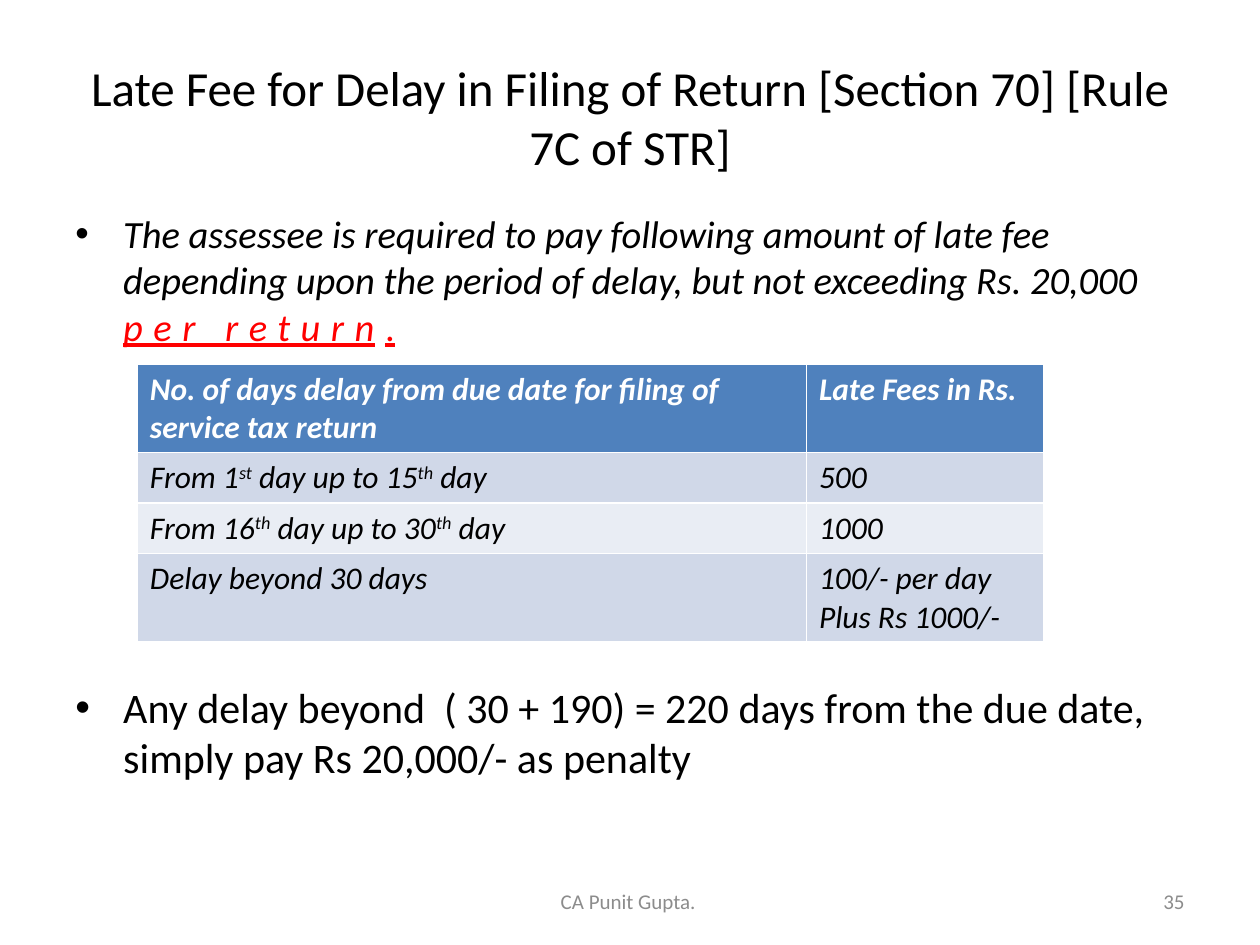
from lxml import etree
from pptx import Presentation
from pptx import util as u
from pptx.dml.color import RGBColor
from pptx.enum import text
from pptx.oxml.ns import qn

WIDTH, HEIGHT = 10, 7.5
MARGIN = 0.05 * WIDTH
CONTENT = WIDTH - 2 * MARGIN
FOOTER_TOP, FOOTER_HEIGHT = 6.95, 0.4
BLACK, GREY, RED, WHITE = "000000", "8C8C8C", "FF0000", "FFFFFF"


def style(font, size, color, bold=False, italic=False):
    font.name = "Calibri"
    font.size = u.Pt(size)
    font.color.rgb = RGBColor.from_string(color)
    font.bold = bold
    font.italic = italic


def add_text_frame(left, top, width, height, anchor):
    box = slide.shapes.add_textbox(*map(u.Inches, (left, top, width, height)))
    box.text_frame.word_wrap = True
    box.text_frame.vertical_anchor = anchor
    return box.text_frame


presentation = Presentation()
presentation.slide_width = u.Inches(WIDTH)
presentation.slide_height = u.Inches(HEIGHT)
slide = presentation.slides.add_slide(presentation.slide_layouts[6])

# Title, footer and slide number
align = text.PP_ALIGN
middle = text.MSO_ANCHOR.MIDDLE
for words, place, size, color, alignment in [
    ("Late Fee for Delay in Filing of Return [Section 70] [Rule 7C of STR]",
     (MARGIN, 0.3, CONTENT, 1.25), 28, BLACK, align.CENTER),
    ("CA Punit Gupta. ",
     (3.42, FOOTER_TOP, 3.17, FOOTER_HEIGHT), 12, GREY, align.CENTER),
    ("35", (7.17, FOOTER_TOP, 2.33, FOOTER_HEIGHT), 12, GREY, align.RIGHT),
]:
    paragraph = add_text_frame(*place, middle).paragraphs[0]
    paragraph.text = words
    paragraph.alignment = alignment
    style(paragraph.font, size, color)

# Bullets above and below the table
body = add_text_frame(MARGIN, 1.62, CONTENT, 5.33, text.MSO_ANCHOR.TOP)
rule, penalty = body.paragraphs[0], body.add_paragraph()
penalty.space_before = u.Pt(190)
for paragraph in (rule, penalty):
    properties = paragraph._p.get_or_add_pPr()
    properties.set("marL", str(u.Inches(0.38)))
    properties.set("indent", str(-u.Inches(0.38)))
    etree.SubElement(properties, qn("a:buFont"), typeface="Arial")
    etree.SubElement(properties, qn("a:buChar"), char="•")

for words, color, italic in [
    ("The assessee is required to pay following amount of late fee depending "
     "upon the period of delay, but not exceeding Rs. 20,000 ", BLACK, True),
    ("per return", RED, True),
    (".", RED, False),
]:
    run = rule.add_run()
    run.text = words
    style(run.font, 22, color, italic=italic)
    if color == RED:
        run.font.underline = True
        run._r.get_or_add_rPr().set("spc", "600")

penalty.text = ("Any delay beyond  ( 30 + 190) = 220 days from the due date, "
                "simply pay Rs 20,000/- as penalty")
style(penalty.font, 24, BLACK)

# Fee table; ^ switches superscript on and off
rows = [
    ("No. of days delay from due date for filing of service tax return",
     "Late Fees in Rs."),
    ("From 1^st^ day up to 15^th^ day", "500"),
    ("From 16^th^ day up to 30^th^ day", "1000"),
    ("Delay beyond 30 days", "100/- per day Plus Rs 1000/-"),
]
row_heights = [0.7, 0.4, 0.4, 0.7]
column_widths = [5.31, 1.88]
fills = ["4F81BD", "D0D8E8", "E9EDF4", "D0D8E8"]
table = slide.shapes.add_table(
    len(rows), len(column_widths), u.Inches(1.09), u.Inches(2.89),
    u.Inches(sum(column_widths)), u.Inches(sum(row_heights))).table
for column, width in zip(table.columns, column_widths):
    column.width = u.Inches(width)
for row_index, values in enumerate(rows):
    header = row_index == 0
    table.rows[row_index].height = u.Inches(row_heights[row_index])
    for column_index, value in enumerate(values):
        cell = table.cell(row_index, column_index)
        cell.fill.solid()
        cell.fill.fore_color.rgb = RGBColor.from_string(fills[row_index])
        paragraph = cell.text_frame.paragraphs[0]
        for part_index, part in enumerate(value.split("^")):
            run = paragraph.add_run()
            run.text = part
            style(run.font, 18, WHITE if header else BLACK, header, True)
            if part_index % 2:
                run._r.get_or_add_rPr().set("baseline", "30000")

presentation.save("out.pptx")
